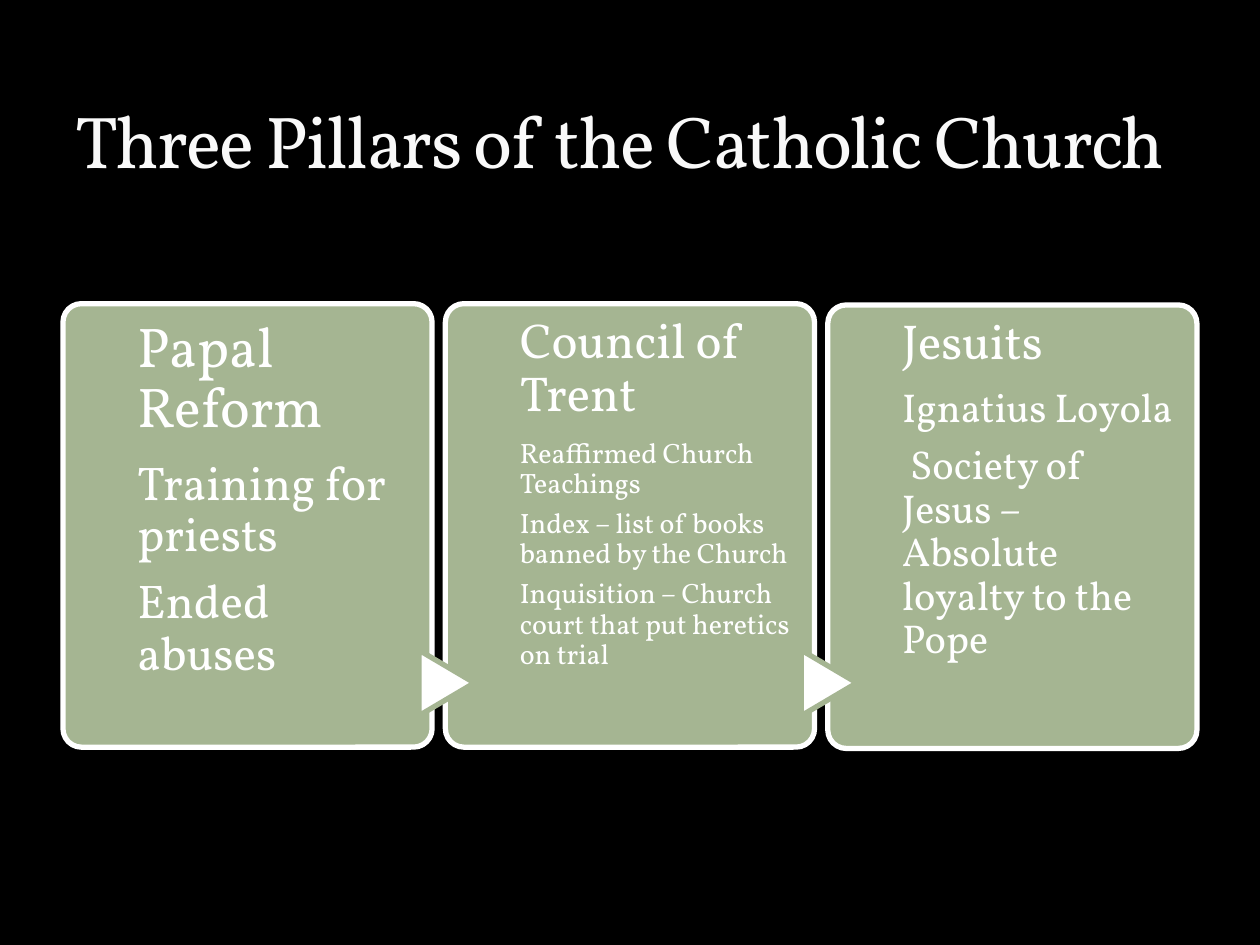
from dataclasses import dataclass

from lxml import etree
from pptx import Presentation
from pptx.dml.color import RGBColor
from pptx.enum.shapes import MSO_SHAPE
from pptx.enum.text import MSO_ANCHOR
from pptx.oxml.ns import qn
from pptx.util import Inches, Pt

ROUND = MSO_SHAPE.ROUNDED_RECTANGLE
WEDGE = MSO_SHAPE.FLOWCHART_EXTRACT
TOP, BOTTOM = MSO_ANCHOR.TOP, MSO_ANCHOR.BOTTOM


@dataclass(frozen=True)
class Theme:
    font: str = "Vollkorn"
    back: str = "000000"
    sage: str = "A5B592"
    white: str = "FFFFFF"
    title: str = "F9F9F9"
    size: int = 42
    line: int = 3
    track: int = -100
    gap: int = 35000


def color(code):
    return RGBColor.from_string(code)


def apply(target, values):
    for name, value in values.items():
        setattr(target, name, value)


class Painter:
    def __init__(self, slide, theme):
        self.slide = slide
        self.theme = theme
        fill = slide.background.fill
        fill.solid()
        fill.fore_color.rgb = color(theme.back)

    def shape(self, kind, box, fill, line):
        item = self.slide.shapes.add_shape(kind, *map(Inches, box))
        item.shadow.inherit = False
        item.fill.solid()
        item.fill.fore_color.rgb = color(fill)
        item.line.color.rgb = color(line)
        item.line.width = Pt(self.theme.line)
        return item

    def panel(self, box):
        item = self.shape(ROUND, box, self.theme.sage, self.theme.white)
        item.adjustments[0] = 0.05

    def arrow(self, box):
        item = self.shape(WEDGE, box, self.theme.white, self.theme.sage)
        item.rotation = 90

    def frame(self, box, values):
        frame = self.slide.shapes.add_textbox(*map(Inches, box)).text_frame
        apply(frame, {"word_wrap": True, **values})
        return frame

    def label(self, para, text, size, code):
        run = para.add_run()
        run.text = text
        apply(run.font, {"name": self.theme.font, "size": Pt(size)})
        run.font.color.rgb = color(code)
        return run

    def title(self, text, box):
        frame = self.frame(box, {"vertical_anchor": BOTTOM})
        run = self.label(frame.paragraphs[0], text, self.theme.size, self.theme.title)
        run._r.get_or_add_rPr().set("spc", str(self.theme.track))

    def body(self, box, inset, rows):
        frame = self.frame(box, {
            "vertical_anchor": TOP, "margin_left": 0, "margin_right": 0,
            "margin_top": Inches(inset), "margin_bottom": 0,
        })
        for i, (text, size) in enumerate(rows):
            para = frame.add_paragraph() if i else frame.paragraphs[0]
            para.line_spacing = 0.9
            after = etree.SubElement(para._p.get_or_add_pPr(), qn("a:spcAft"))
            etree.SubElement(after, qn("a:spcPct"), val=str(self.theme.gap))
            self.label(para, text, size, self.theme.white)


PILLARS = [
    (2.41, 0.12, 32, 27, ["Papal Reform", "Training for priests", "Ended abuses"]),
    (2.41, 0.1, 28, 16, [
        "Council of Trent",
        "Reaffirmed Church Teachings",
        "Index – list of books banned by the Church",
        "Inquisition – Church court that put heretics on trial",
    ]),
    (2.42, 0.1, 28, 23, [
        "Jesuits",
        "Ignatius Loyola",
        " Society of Jesus – Absolute loyalty to the Pope",
    ]),
]
LEFT, RIGHT, WIDTH, HEIGHT = 0.5, 9.5, 2.93, 3.52
STEP = (RIGHT - LEFT - WIDTH) / (len(PILLARS) - 1)
INDENT, COLUMN = 0.59, 2.18


def main():
    deck = Presentation()
    deck.slide_width, deck.slide_height = Inches(10), Inches(7.5)
    paint = Painter(deck.slides.add_slide(deck.slide_layouts[6]), Theme())
    for i, (top, inset, head, size, lines) in enumerate(PILLARS):
        left = LEFT + i * STEP
        paint.panel((left, top, WIDTH, HEIGHT))
        if i:
            paint.arrow((left - 0.25, 5.2, 0.52, 0.44))
        rows = [(text, size if n else head) for n, text in enumerate(lines)]
        paint.body((left + INDENT, top, COLUMN, HEIGHT), inset, rows)
    paint.title("Three Pillars of the Catholic Church", (0.5, 0.17, 9, 1.33))
    deck.save("out.pptx")


if __name__ == "__main__":
    main()
